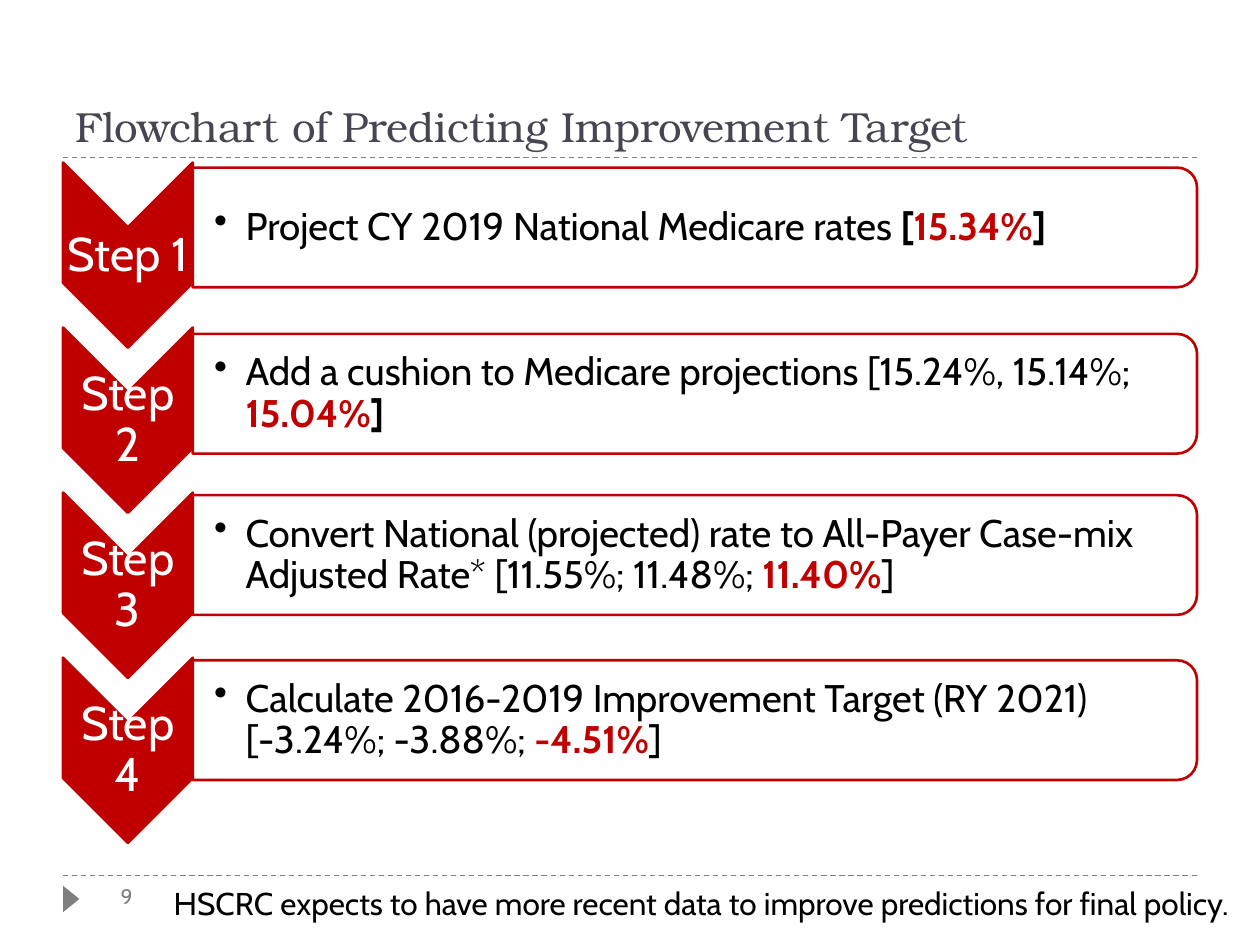
from dataclasses import dataclass

from lxml.etree import SubElement
from pptx import Presentation
from pptx.dml.color import RGBColor
from pptx.enum.dml import MSO_LINE
from pptx.enum.shapes import MSO_CONNECTOR, MSO_SHAPE
from pptx.enum.text import MSO_ANCHOR, PP_ALIGN
from pptx.oxml.ns import qn
from pptx.util import Inches, Pt


@dataclass(frozen=True)
class Theme:
    red: str = "C00000"
    black: str = "000000"
    white: str = "FFFFFF"
    gray: str = "7F7F7F"
    slate: str = "464653"
    body_font: str = "Cabin"
    title_font: str = "TeX Gyre Bonum"
    title_size: int = 24
    step_size: int = 27
    detail_size: int = 22
    note_size: int = 18
    number_size: int = 12


THEME = Theme()
CHEVRON_TOP = 1.29
STEP_PITCH = 1.31
STEPS = [
    (1.33, [("Project CY 2019 National Medicare rates ", False, THEME.black),
            ("[", True, THEME.black), ("15.34%", True, THEME.red), ("]", True, THEME.black)]),
    (2.65, [("Add a cushion to Medicare projections [15.24%, 15.14%; ", False, THEME.black),
            ("15.04%", True, THEME.red), ("]", True, THEME.black)]),
    (3.93, [("Convert National (projected) rate to All-Payer Case-mix Adjusted Rate* "
             "[11.55%; 11.48%; ", False, THEME.black),
            ("11.40%", True, THEME.red), ("]", False, THEME.black)]),
    (5.24, [("Calculate 2016-2019 Improvement Target (RY 2021) [-3.24%; -3.88%; ",
             False, THEME.black),
            ("-4.51%", True, THEME.red), ("]", False, THEME.black)]),
]


def add_bullet(paragraph, color):
    properties = paragraph._p.get_or_add_pPr()
    properties.set("lvl", "1")
    properties.set("marL", str(Inches(0.25)))
    properties.set("indent", str(Inches(-0.25)))
    bullet_color = SubElement(properties, qn("a:buClr"))
    SubElement(bullet_color, qn("a:srgbClr"), val=color)
    SubElement(properties, qn("a:buChar"), char="•")


def add_text(shapes, content, left, top, width, height, *, size, color=THEME.black,
             font=THEME.body_font, anchor=MSO_ANCHOR.TOP, align=PP_ALIGN.LEFT,
             spacing=None, margins=(0.1, 0.05, 0.1, 0.05), bullet=False):
    box = shapes.add_textbox(Inches(left), Inches(top), Inches(width), Inches(height))
    frame = box.text_frame
    frame.word_wrap = True
    frame.vertical_anchor = anchor
    (frame.margin_left, frame.margin_top,
     frame.margin_right, frame.margin_bottom) = map(Inches, margins)
    paragraph = frame.paragraphs[0]
    paragraph.alignment = align
    if spacing:
        paragraph.line_spacing = spacing
    if bullet:
        add_bullet(paragraph, color)
    runs = [(content, False, color)] if isinstance(content, str) else content
    for text, bold, run_color in runs:
        run = paragraph.add_run()
        run.text = text
        run.font.name = font
        run.font.size = Pt(size)
        run.font.bold = bold
        run.font.color.rgb = RGBColor.from_string(run_color)


def add_turned_shape(shapes, kind, left, top, width, height, fill, line=None):
    shape = shapes.add_shape(
        kind, Inches(left + (width - height) / 2), Inches(top + (height - width) / 2),
        Inches(height), Inches(width))
    shape.rotation = 90
    shape.shadow.inherit = False
    shape.fill.solid()
    shape.fill.fore_color.rgb = RGBColor.from_string(fill)
    if line:
        shape.line.color.rgb = RGBColor.from_string(line)
        shape.line.width = Pt(1.5)
    else:
        shape.line.fill.background()
    return shape


def add_dashed_rule(shapes, top):
    rule = shapes.add_connector(
        MSO_CONNECTOR.STRAIGHT, Inches(0.5), Inches(top), Inches(9.5), Inches(top))
    rule.line.color.rgb = RGBColor.from_string(THEME.gray)
    rule.line.width = Pt(0.75)
    rule.line.dash_style = MSO_LINE.DASH
    SubElement(rule._element.spPr, qn("a:effectLst"))


def add_step(shapes, number, chevron_top, panel_top, detail):
    add_turned_shape(shapes, MSO_SHAPE.CHEVRON, 0.5, chevron_top, 1.03, 1.47,
                     THEME.red, THEME.red)
    add_text(shapes, f"Step {number}", 0.5, chevron_top + 0.52, 1.03, 0.44,
             size=THEME.step_size, color=THEME.white, anchor=MSO_ANCHOR.MIDDLE,
             align=PP_ALIGN.CENTER, spacing=0.9, margins=(0.02,) * 4)
    panel = add_turned_shape(shapes, MSO_SHAPE.ROUND_2_SAME_RECTANGLE, 1.53, panel_top,
                             7.97, 0.95, THEME.white, THEME.red)
    panel.adjustments[0] = 0.167
    panel.adjustments[1] = 0
    fill_color = panel._element.spPr.find(qn("a:solidFill")).find(qn("a:srgbClr"))
    SubElement(fill_color, qn("a:alpha"), val="90000")
    add_text(shapes, detail, 1.53, panel_top + 0.05, 7.93, 0.86,
             size=THEME.detail_size, anchor=MSO_ANCHOR.MIDDLE, spacing=0.9,
             margins=(0.17, 0.02, 0.02, 0.02), bullet=True)


def main():
    presentation = Presentation()
    presentation.slide_width = Inches(10)
    presentation.slide_height = Inches(7.5)
    slide = presentation.slides.add_slide(presentation.slide_layouts[6])
    shapes = slide.shapes

    for top in (6.95, 1.25):
        add_dashed_rule(shapes, top)
    add_turned_shape(shapes, MSO_SHAPE.ISOSCELES_TRIANGLE, 0.5, 7.03, 0.13, 0.21, THEME.gray)
    add_text(shapes, "9", 0.86, 6.96, 0.41, 0.3, size=THEME.number_size, color=THEME.gray)
    add_text(shapes, "Flowchart of Predicting Improvement Target", 0.5, 0.17, 9, 1.08,
             size=THEME.title_size, color=THEME.slate, font=THEME.title_font,
             anchor=MSO_ANCHOR.BOTTOM)

    flowchart = shapes.add_group_shape()
    for index, (panel_top, detail) in enumerate(STEPS):
        add_step(flowchart.shapes, index + 1, CHEVRON_TOP + index * STEP_PITCH,
                 panel_top, detail)

    add_text(shapes, "HSCRC expects to have more recent data to improve predictions "
             "for final policy.", 1.28, 6.97, 8.64, 0.4, size=THEME.note_size)
    presentation.save("out.pptx")


if __name__ == "__main__":
    main()
